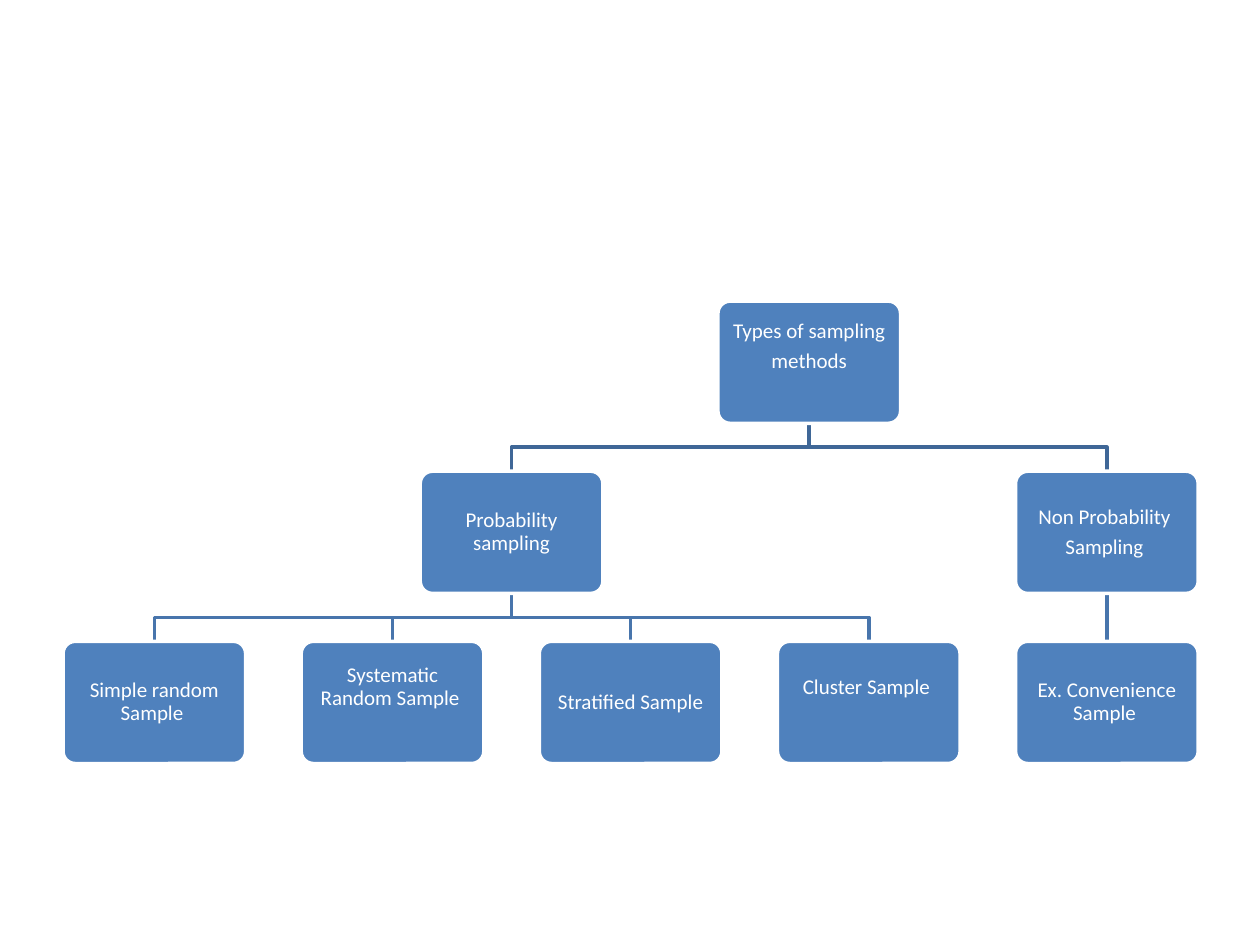
"""Build a slide with a tree of sampling methods."""
from lxml import etree
from pptx import Presentation
from pptx.dml.color import RGBColor
from pptx.enum.shapes import MSO_CONNECTOR, MSO_SHAPE
from pptx.enum.text import MSO_ANCHOR, PP_ALIGN
from pptx.oxml.ns import qn
from pptx.util import Inches, Pt

ROUNDED = MSO_SHAPE.ROUNDED_RECTANGLE
STRAIGHT = MSO_CONNECTOR.STRAIGHT
MIDDLE = MSO_ANCHOR.MIDDLE
CENTER = PP_ALIGN.CENTER

METHODS = {
    "text": "Types of sampling\nmethods", "raised": True,
    "children": [
        {"text": "Probability sampling",
         "children": [
             {"text": "Simple random Sample "},
             {"text": "Systematic Random Sample ", "raised": True},
             {"text": "Stratified Sample"},
             {"text": "Cluster Sample ", "raised": True},
         ]},
        {"text": "Non Probability \nSampling ",
         "children": [{"text": "Ex. Convenience Sample "}]},
    ],
}
BOX_FILL, WHITE = "4F81BD", "FFFFFF"
LINK_COLORS = ["3F6797", "4875AC"]
LEFT, TOP = 0.5, 2.39
BOX_WIDTH, BOX_HEIGHT = 1.45, 0.97
COLUMN_STEP, ROW_STEP = 1.89, 1.35
INSET, RAISE = 0.05, 0.24


def color(hex_text):
    return RGBColor.from_string(hex_text)


def place(method, level, next_column):
    """Put leaves in successive columns and parents midway over their children."""
    children = method.get("children", [])
    for child in children:
        next_column = place(child, level + 1, next_column)
    if children:
        method["column"] = (children[0]["column"] + children[-1]["column"]) / 2
    else:
        method["column"] = next_column
        next_column += 1
    method["left"] = LEFT + COLUMN_STEP * method["column"]
    method["center"] = method["left"] + BOX_WIDTH / 2
    method["top"] = TOP + ROW_STEP * level
    return next_column


def draw_link(shapes, parent, child, hex_text):
    start_y, end_y = parent["top"] + BOX_HEIGHT, child["top"]
    middle_y = (start_y + end_y) / 2
    start = Inches(parent["center"]), Inches(start_y)
    end = Inches(child["center"]), Inches(end_y)
    if parent["column"] == child["column"]:
        link = shapes.add_connector(STRAIGHT, *start, *end)
        etree.SubElement(link._element.spPr, qn("a:effectLst"))
    else:
        builder = shapes.build_freeform(*start)
        bends = [(start[0], Inches(middle_y)), (end[0], Inches(middle_y)), end]
        builder.add_line_segments(bends, close=False)
        link = builder.convert_to_shape()
        link.fill.background()
        link.shadow.inherit = False
    link.line.color.rgb = color(hex_text)
    link.line.width = Pt(2)


def draw_box(shapes, method):
    box = shapes.add_shape(ROUNDED, Inches(method["left"]), Inches(method["top"]),
                           Inches(BOX_WIDTH), Inches(BOX_HEIGHT))
    box.adjustments[0] = 0.1
    box.shadow.inherit = False
    box.fill.solid()
    box.fill.fore_color.rgb = color(BOX_FILL)
    box.line.color.rgb = color(WHITE)
    box.line.width = Pt(2)
    frame = box.text_frame
    frame.word_wrap = True
    frame.vertical_anchor = MIDDLE
    frame.margin_left = frame.margin_right = frame.margin_top = Inches(INSET)
    frame.margin_bottom = Inches(INSET + RAISE * method.get("raised", False))
    frame.text = method["text"]
    for paragraph in frame.paragraphs:
        paragraph.alignment = CENTER
        paragraph.line_spacing = 0.9
        paragraph.space_after = Pt(4.2)
        font = paragraph.runs[0].font
        font.name = "Calibri"
        font.size = Pt(12)
        font.color.rgb = color(WHITE)


def draw(shapes, method, level=0):
    for child in method.get("children", []):
        draw_link(shapes, method, child, LINK_COLORS[level])
        draw(shapes, child, level + 1)
    draw_box(shapes, method)


def main():
    deck = Presentation()
    deck.slide_width, deck.slide_height = Inches(10), Inches(7.5)
    slide = deck.slides.add_slide(deck.slide_layouts[6])
    place(METHODS, 0, 0)
    draw(slide.shapes, METHODS)
    deck.save("out.pptx")


if __name__ == "__main__":
    main()
